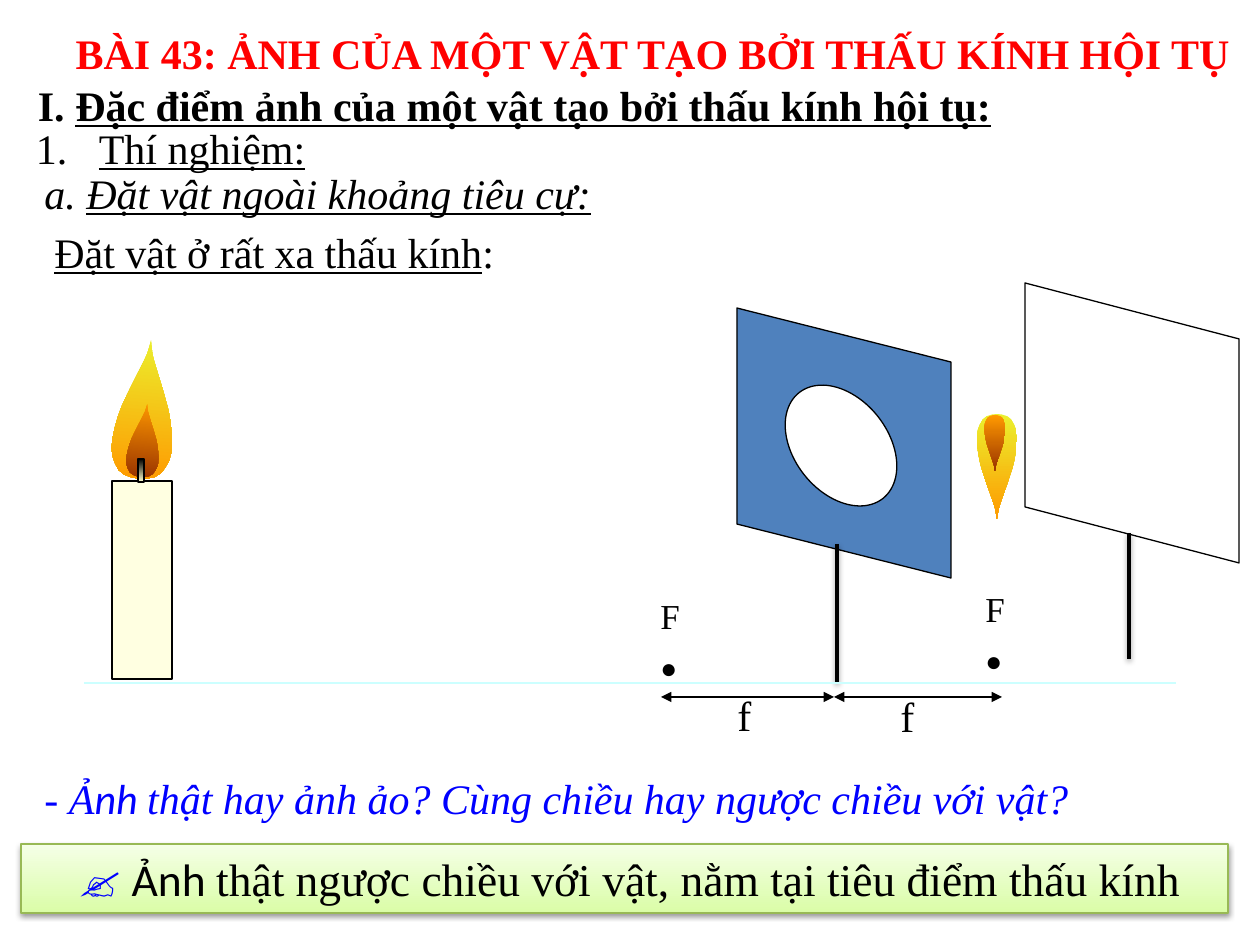
from lxml import etree
from pptx import Presentation
from pptx import util as u
from pptx.dml.color import RGBColor
from pptx.enum import shapes, text
from pptx.oxml.ns import qn

PX = 914400 / 126  # EMU per px, on a slide of 1260 x 945 px

BLACK = RGBColor(0x00, 0x00, 0x00)
WHITE = RGBColor(0xFF, 0xFF, 0xFF)
RED = RGBColor(0xFF, 0x00, 0x00)
BLUE = RGBColor(0x00, 0x00, 0xFF)
LENS_BLUE = RGBColor(0x4F, 0x81, 0xBD)
TABLE_CYAN = RGBColor(0xCC, 0xFF, 0xFF)
WAX = RGBColor(0xFF, 0xFF, 0xE1)
WICK_END = RGBColor(0xFF, 0xFF, 0xCC)
YELLOW = RGBColor(0xEB, 0xF0, 0x2E)
ORANGE = RGBColor(0xFF, 0x99, 0x00)
BROWN = RGBColor(0x99, 0x33, 0x00)
PALE_GREEN = RGBColor(0xF5, 0xFF, 0xE7)
LIGHT_GREEN = RGBColor(0xDA, 0xFD, 0xA7)
GREEN = RGBColor(0x98, 0xB9, 0x55)

SERIF = "Times New Roman"
LEFT, CENTER, JUSTIFY = text.PP_ALIGN.LEFT, text.PP_ALIGN.CENTER, text.PP_ALIGN.JUSTIFY


def write(tf, runs, size, color=BLACK, align=LEFT, wrap=True):
    """Fill the first paragraph; a run is (text, letters of b/i/u, font, colour)."""
    tf.word_wrap = wrap
    p = tf.paragraphs[0]
    p.alignment = align
    for words, style, *extra in runs:
        r = p.add_run()
        r.text = words
        r.font.size = u.Pt(size)
        r.font.name = extra[0] if extra else SERIF
        r.font.color.rgb = extra[1] if len(extra) > 1 else color
        r.font.bold, r.font.italic, r.font.underline = (c in style for c in "biu")
    return p


def shade(sp, top, bottom):
    """Gradient fill running straight down."""
    sp.fill.gradient()
    sp.fill.gradient_angle = 270
    for stop, color in zip(sp.fill.gradient_stops, (top, bottom)):
        stop.color.rgb = color


prs = Presentation()
prs.slide_width, prs.slide_height = round(1260 * PX), round(945 * PX)
s = prs.slides.add_slide(prs.slide_layouts[5])

# Title
title = s.shapes.title
title.left, title.top, title.width, title.height = (round(v * PX) for v in (63, 21, 1191, 63))
title.text_frame.vertical_anchor = text.MSO_ANCHOR.TOP
title.text_frame.auto_size = text.MSO_AUTO_SIZE.NONE
write(title.text_frame, [("BÀI 43: ẢNH CỦA MỘT VẬT TẠO BỞI THẤU KÍNH HỘI TỤ", "b")],
      24, RED, LEFT, False)

# Headings, question and labels: box in px, runs, size, colour, alignment, wrap
blocks = [
    ((25, 73, 979, 63), [("I. ", "b"), ("Đặc điểm ảnh của một vật tạo bởi thấu kính hội tụ:", "bu")],
     24, BLACK, CENTER, False),
    ((16, 116, 309, 64), [("Thí nghiệm:", "u")], 24, BLACK, CENTER, False),
    ((32, 161, 892, 63), [("a. ", "i"), ("Đặt vật ngoài khoảng tiêu cự:", "iu")],
     24, BLACK, JUSTIFY, True),
    ((42, 220, 892, 63), [("Đặt vật ở rất xa thấu kính", "u"), (":", "")],
     24, BLACK, JUSTIFY, True),
    ((32, 766, 1187, 63), [("- Ả", "i"), ("nh ", "i", "Calibri"),
                           ("thật hay ảnh ảo? Cùng chiều hay ngược chiều với vật?", "i")],
     24, BLUE, LEFT, True),
    ((648, 588, 73, 102), [("F", "")], 20, BLACK, LEFT, True),
    ((973, 581, 73, 102), [("F", "")], 20, BLACK, LEFT, True),
    ((725, 683, 63, 64), [("f", "")], 24, BLACK, LEFT, True),
    ((888, 684, 63, 64), [("f", "")], 24, BLACK, LEFT, True),
]
for box, runs, *look in blocks:
    tf = s.shapes.add_textbox(*(round(v * PX) for v in box)).text_frame
    p = write(tf, runs, *look)
    if runs[0][0] == "Thí nghiệm:":  # numbered with a hanging indent
        pPr = p._p.get_or_add_pPr()
        pPr.set("marL", "457200")
        pPr.set("indent", "-457200")
        etree.SubElement(pPr, qn("a:buFont"), typeface="+mj-lt")
        etree.SubElement(pPr, qn("a:buAutoNum"), type="arabicPeriod")
    if runs[0][0] == "F":  # focal point
        p = tf.add_paragraph()
        p.text = "●"
        p.space_before = u.Pt(8)
        p.runs[0].font.size = u.Pt(16)
        p.runs[0].font.name = "Arial"
        p.runs[0].font.color.rgb = BLACK

# Screen, lens and candle body: parent, shape, box in px, rotation, fill
screen = s.shapes.add_group_shape().shapes
lens = s.shapes.add_group_shape().shapes
candle = s.shapes.add_group_shape().shapes
image = s.shapes.add_group_shape().shapes
BOARD, OVAL, RECT = (shapes.MSO_SHAPE.FLOWCHART_DATA, shapes.MSO_SHAPE.OVAL,
                     shapes.MSO_SHAPE.RECTANGLE)
solids = [
    (screen, BOARD, (992, 316, 280, 214), 90, WHITE),
    (lens, BOARD, (709, 336, 270, 214), 270, LENS_BLUE),
    (lens, OVAL, (794, 378, 94, 135), 141.6, WHITE),
    (candle, RECT, (112, 481, 60, 198), 0, WAX),
]
for parent, kind, box, turn, color in solids:
    sp = parent.add_shape(kind, *(round(v * PX) for v in box))
    sp.shadow.inherit = False
    sp.rotation = turn
    sp.fill.solid()
    sp.fill.fore_color.rgb = color
    sp.line.color.rgb = BLACK
    sp.line.width = u.Pt(0.75)

# Flames: half outline from the round end to the tip, in % of half width and height
HALF = [(0, 0), (25, 0.5), (50, 2), (70, 5), (85, 10), (95, 15), (100, 21), (99, 28),
        (95, 35), (88, 43), (78, 51), (66, 58), (54, 65), (41, 72), (28, 79), (17, 85),
        (9, 90), (4, 95), (0, 100)]
OUTLINE = HALF + [(-x, y) for x, y in HALF[-2:0:-1]]
flames = [  # parent, centre x, round end y, width, signed height, rotation, colours
    (candle, 145, 479, 60, -139, 5, YELLOW, ORANGE),
    (candle, 144, 477, 32, -73, 5, ORANGE, BROWN),
    (image, 997, 414, 40, 105, 0, YELLOW, ORANGE),
    (image, 995, 415, 21, 56, 0, ORANGE, BROWN),
]
for parent, cx, base, w, h, turn, top, bottom in flames:
    points = [((cx + x * w / 200) * PX, (base + y * h / 100) * PX) for x, y in OUTLINE]
    fb = parent.build_freeform(*points[0])
    fb.add_line_segments(points[1:], close=True)
    sp = fb.convert_to_shape()
    sp.shadow.inherit = False
    sp.rotation = turn
    sp.line.fill.background()
    shade(sp, top, bottom)

# Wick
wick = candle.add_shape(RECT, *(round(v * PX) for v in (138, 459, 6, 23)))
wick.shadow.inherit = False
shade(wick, BLACK, WICK_END)
wick.line.color.rgb = BLACK
wick.line.width = u.Pt(0.75)

# Conclusion banner
banner = s.shapes.add_shape(RECT, *(round(v * PX) for v in (21, 844, 1207, 69)))
banner.shadow.inherit = False
shade(banner, PALE_GREEN, LIGHT_GREEN)
banner.line.color.rgb = GREEN
banner.line.width = u.Pt(0.75)
write(banner.text_frame, [(" ✍ ", "", SERIF, BLUE), ("Ảnh ", "", "Calibri"),
                          ("thật ngược chiều với vật, nằm tại tiêu điểm thấu kính", "")],
      26, BLACK, CENTER)
shadowed = [banner._element.spPr.find(qn("a:effectLst"))]

# Stands, table line and focal lengths: parent, ends in px, width, colour, role
lines = [
    (screen, (1129, 533, 1129, 659), 2, BLACK, "stand"),
    (lens, (837, 544, 837, 682), 2, BLACK, "stand"),
    (s.shapes, (84, 683, 1176, 683), 0.75, TABLE_CYAN, "table"),
    (s.shapes, (834, 697, 1002, 697), 0.75, BLACK, "length"),
    (s.shapes, (834, 697, 661, 697), 0.75, BLACK, "length"),
]
for parent, ends, width, color, role in lines:
    c = parent.add_connector(shapes.MSO_CONNECTOR.STRAIGHT, *(round(v * PX) for v in ends))
    c.line.color.rgb = color
    c.line.width = u.Pt(width)
    if role == "length":
        for end in ("a:headEnd", "a:tailEnd"):
            etree.SubElement(c.line._get_or_add_ln(), qn(end), type="triangle")
    effects = etree.SubElement(c._element.spPr, qn("a:effectLst"))
    if role == "stand":
        shadowed.append(effects)

# Soft drop shadow of the banner and the stands
for effects in shadowed:
    shadow = etree.SubElement(effects, qn("a:outerShdw"), blurRad="40000", dist="20000",
                              dir="5400000", rotWithShape="0")
    tint = etree.SubElement(shadow, qn("a:srgbClr"), val=str(BLACK))
    etree.SubElement(tint, qn("a:alpha"), val="38000")

prs.save("out.pptx")
